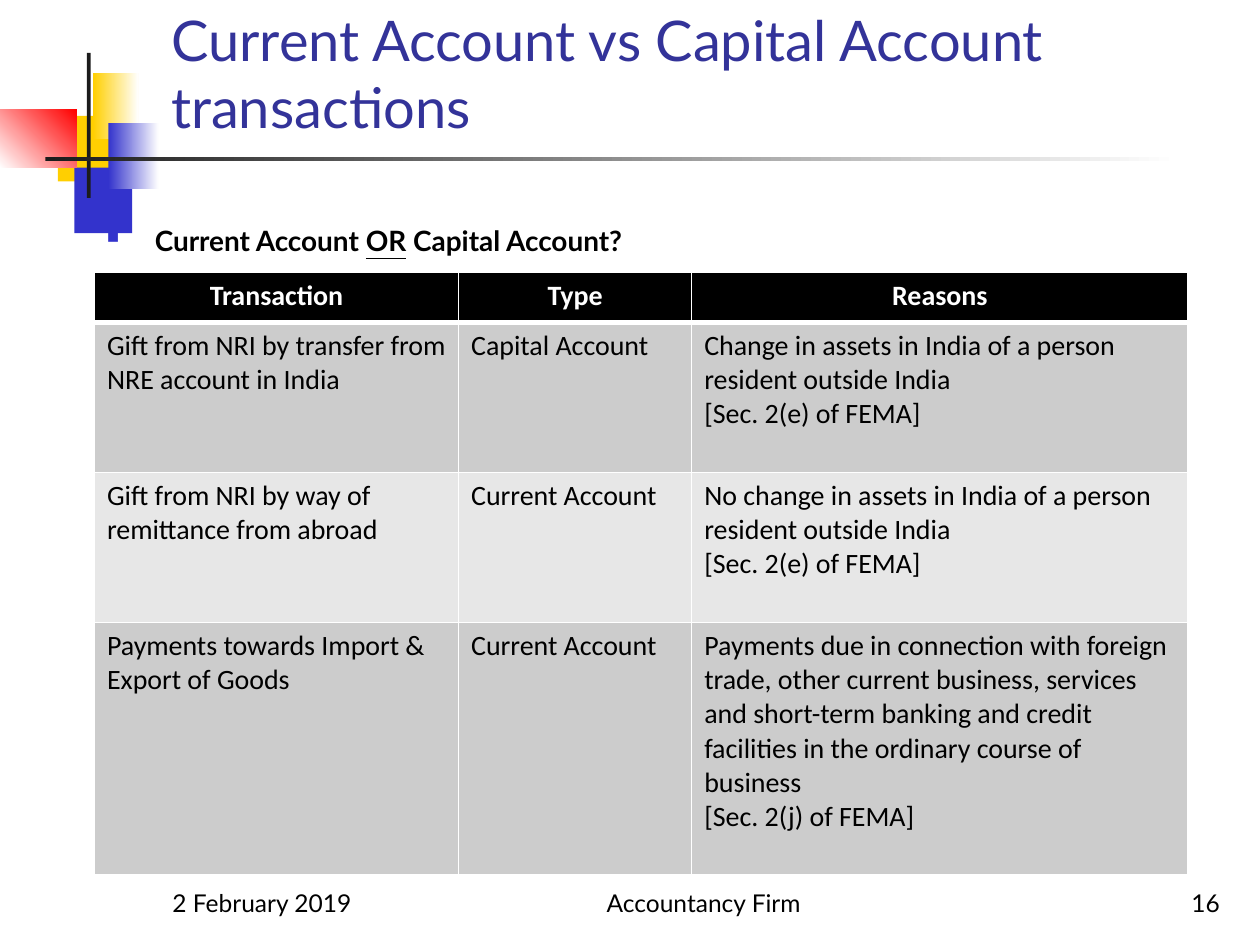
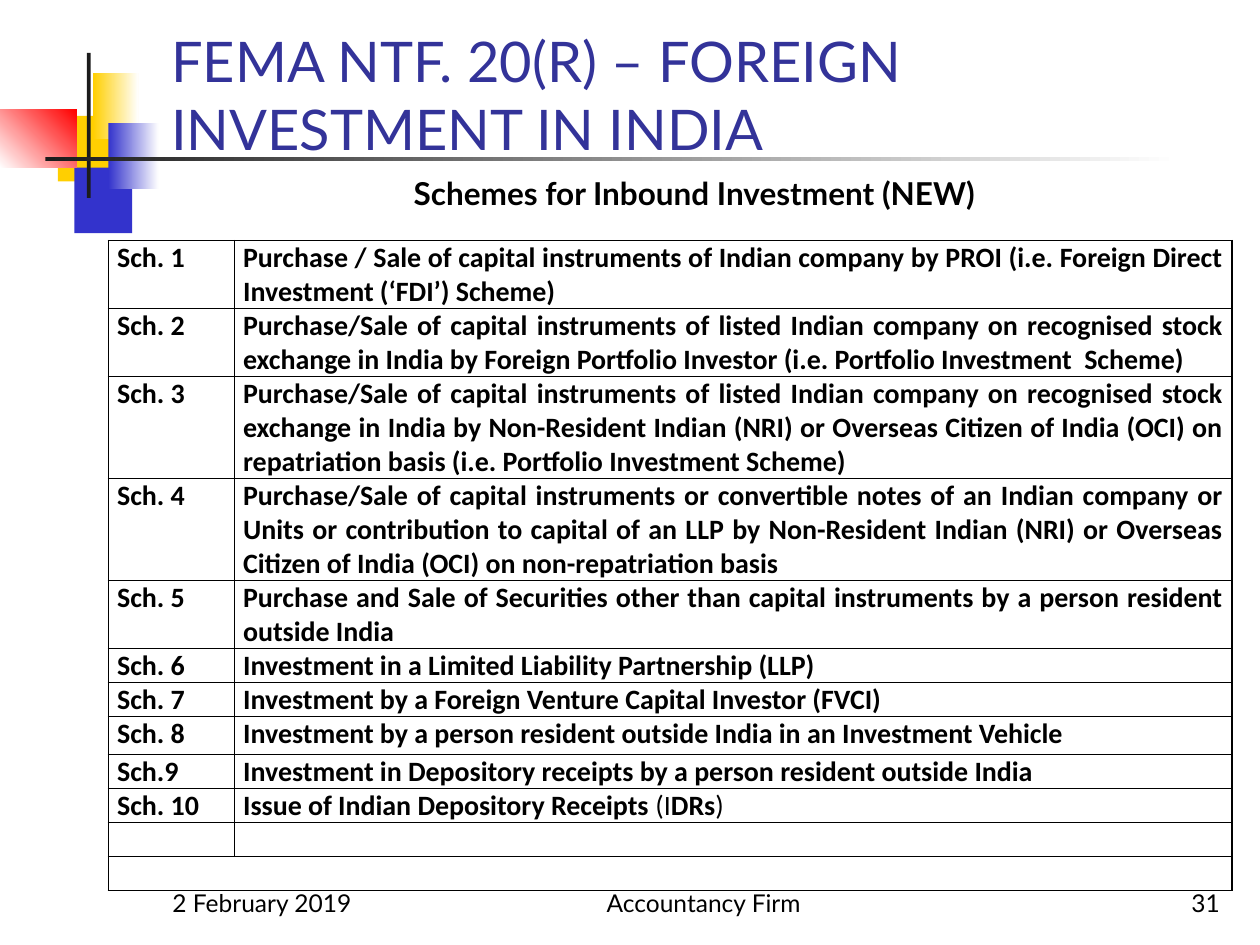
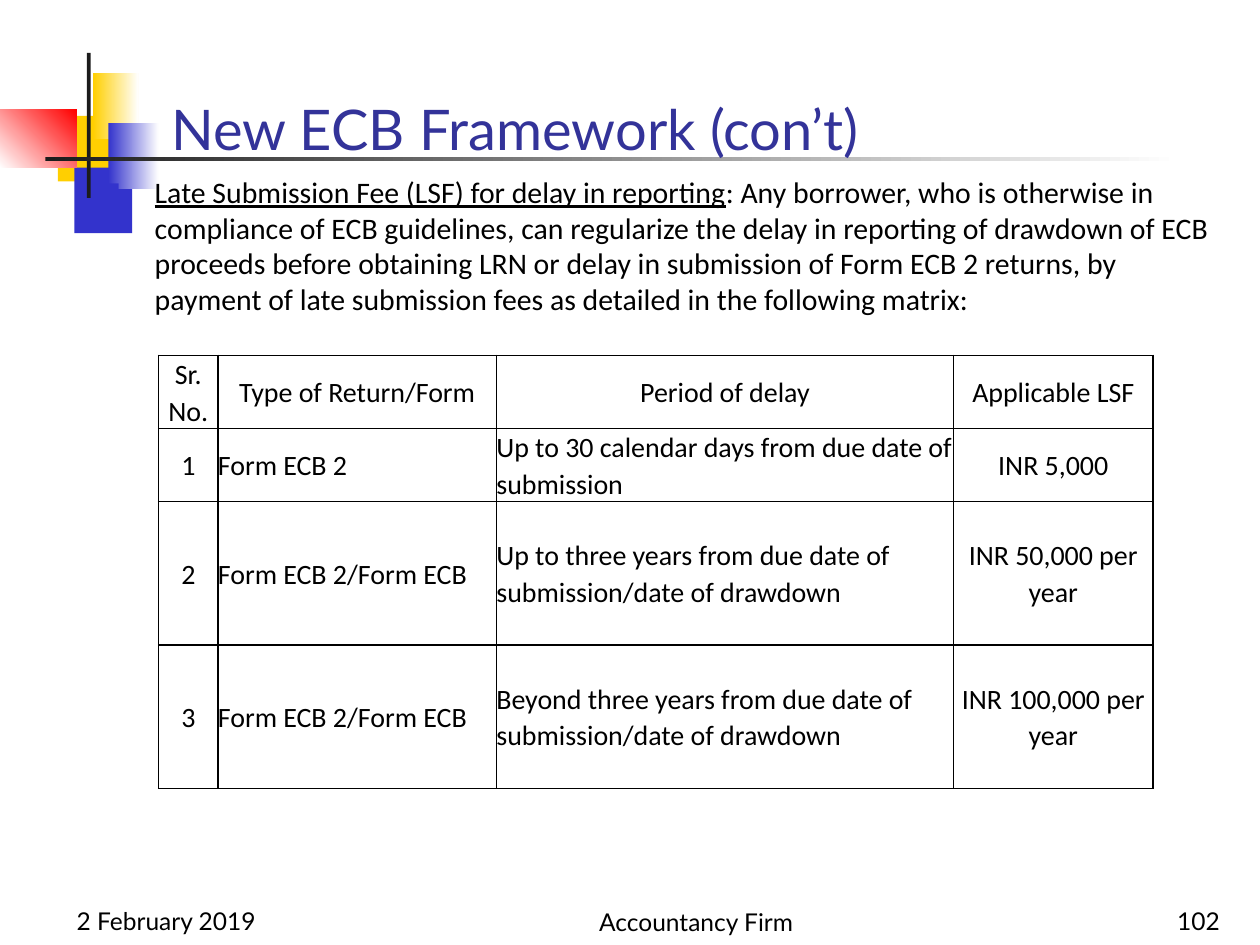
"""Build three slides on foreign exchange rules with a shared look."""
from dataclasses import dataclass

from lxml.etree import SubElement
from pptx import Presentation
from pptx.dml.color import RGBColor
from pptx.enum.shapes import MSO_SHAPE
from pptx.enum.text import MSO_ANCHOR, PP_ALIGN
from pptx.oxml.ns import qn
from pptx.util import Emu, Pt

PX = 9144
LEFT, CENTER, RIGHT, JUSTIFY = PP_ALIGN.LEFT, PP_ALIGN.CENTER, PP_ALIGN.RIGHT, PP_ALIGN.JUSTIFY


def px(n):
    return Emu(n * PX)


@dataclass(frozen=True)
class Theme:
    title: str = "333399"
    blue: str = "3333CC"
    yellow: str = "FFCF01"
    red: str = "FF0000"
    dark: str = "1C1C1C"
    black: str = "000000"
    white: str = "FFFFFF"
    band: str = "CCCCCC"
    light_band: str = "E7E7E7"
    head_font: str = "Lato"
    cell_font: str = "Calibri"
    title_size: int = 32
    scheme_size: int = 18
    body_size: int = 17
    cell_size: int = 16
    footer_size: int = 14


class Deck:
    def __init__(self, theme):
        self.t = theme
        self.prs = Presentation()
        self.prs.slide_width, self.prs.slide_height = px(1000), px(750)
        self.s = None

    def slide(self, title, title_box, number, date_at=(127, 683), firm_at=(400, 683)):
        t = self.t
        self.s = self.prs.slides.add_slide(self.prs.slide_layouts[6])
        self.rect((46, 92, 48, 52), t.yellow)
        self.rect((59, 133, 46, 52), t.blue)
        self.rect((74, 58, 36, 52), t.yellow, t.white)
        self.rect((86, 98, 40, 52), t.blue, t.white)
        self.rect((0, 87, 61, 46), t.white, t.red, angle=45)
        self.rect((69, 42, 3, 115), t.dark)
        self.rect((36, 125, 900, 3), t.dark, t.white)
        self.text(title_box, [(title, "")], t.title_size, t.title, anchor=MSO_ANCHOR.BOTTOM)
        footers = (
            ((*date_at, 208, 50), "2 February 2019", LEFT),
            ((*firm_at, 317, 50), "Accountancy Firm", CENTER),
            ((770, date_at[1], 208, 50), number, RIGHT),
        )
        for box, words, align in footers:
            self.text(box, [(words, "")], t.footer_size, align=align, anchor=MSO_ANCHOR.BOTTOM)

    def rect(self, box, color, end=None, angle=0):
        sp = self.s.shapes.add_shape(MSO_SHAPE.RECTANGLE, *map(px, box))
        sp.shadow.inherit = False
        sp.line.fill.background()
        if end is None:
            sp.fill.solid()
            sp.fill.fore_color.rgb = RGBColor.from_string(color)
            return
        sp.fill.gradient()
        sp.fill.gradient_angle = angle
        for stop, position, c in zip(sp.fill.gradient_stops, (0, 1), (color, end)):
            stop.position = position
            stop.color.rgb = RGBColor.from_string(c)

    def runs(self, p, parts, size, color, font):
        for words, flags in parts:
            r = p.add_run()
            r.text = words
            r.font.name, r.font.size = font, Pt(size)
            r.font.color.rgb = RGBColor.from_string(color)
            r.font.bold, r.font.underline = "b" in flags, "u" in flags
        if not parts:
            SubElement(p._p, qn("a:endParaRPr"), sz=str(size * 100))

    def text(self, box, parts, size, color=None, font=None, align=LEFT,
             anchor=MSO_ANCHOR.TOP, top=5, indent=0, bullet=False):
        tf = self.s.shapes.add_textbox(*map(px, box)).text_frame
        tf.word_wrap, tf.vertical_anchor, tf.margin_top = True, anchor, px(top)
        p = tf.paragraphs[0]
        p.alignment = align
        pPr = p._p.get_or_add_pPr()
        pPr.set("marL", str(px(indent)))
        if bullet:
            pPr.set("indent", str(-px(indent)))
            SubElement(SubElement(pPr, qn("a:buClr")), qn("a:srgbClr"), val=self.t.blue)
            SubElement(pPr, qn("a:buSzPct"), val="60000")
            SubElement(pPr, qn("a:buChar"), char="■")
        self.runs(p, parts, size, color or self.t.black, font or self.t.head_font)

    def border(self, cell, color, widths):
        tcPr = cell._tc.get_or_add_tcPr()
        for i, (side, width) in enumerate(zip("LRTB", widths)):
            ln = SubElement(tcPr, qn(f"a:ln{side}"), w=str(Pt(width)))
            SubElement(SubElement(ln, qn("a:solidFill")), qn("a:srgbClr"), val=color)
            tcPr.insert(i, ln)

    def table(self, at, cols, heights, rows, aligns, head_align=None, fills=None,
              line=None, flags="", margins=(10, 5), anchor=MSO_ANCHOR.TOP, spacing=None):
        t = self.t
        box = (*at, sum(cols), sum(heights))
        table = self.s.shapes.add_table(len(rows), len(cols), *map(px, box)).table
        table.first_row = table.horz_banding = False
        for col, width in zip(table.columns, cols):
            col.width = px(width)
        for i, (row, height) in enumerate(zip(rows, heights)):
            table.rows[i].height = px(height)
            head = i == 0 and fills
            for j, value in enumerate(row):
                cell = table.cell(i, j)
                cell.margin_left = cell.margin_right = px(margins[0])
                cell.margin_top = cell.margin_bottom = px(margins[1])
                cell.vertical_anchor = anchor
                if fills:
                    cell.fill.solid()
                    cell.fill.fore_color.rgb = RGBColor.from_string(fills[i])
                else:
                    cell.fill.background()
                rule = 3 if fills else 1
                self.border(cell, line or t.black,
                            (1, 1, rule if i == 1 else 1, rule if i == 0 else 1))
                lines = value.split("\n") if isinstance(value, str) else [value]
                for k, words in enumerate(lines):
                    tf = cell.text_frame
                    p = tf.add_paragraph() if k else tf.paragraphs[0]
                    p.alignment = head_align if i == 0 and head_align else aligns[j]
                    if spacing:
                        p.line_spacing, p.space_after = spacing[0], Pt(spacing[1])
                    if isinstance(words, str):
                        words = [(words, "b" if head else flags)] if words else []
                    self.runs(p, words, t.cell_size, t.white if head else t.black, t.cell_font)
        return table


def account_slide(deck):
    t = deck.t
    deck.slide("Current Account vs Capital Account transactions", (126, 12, 852, 104), "16")
    deck.text((75, 142, 908, 568),
              [("Current Account ", "b"), ("OR", "bu"), (" Capital Account?", "b")],
              t.cell_size, top=35, indent=38, bullet=True)
    rows = [
        ("Transaction", "Type", "Reasons"),
        ("Gift from NRI by transfer from NRE account in India", "Capital Account",
         "Change in assets in India of a person resident outside India\n[Sec. 2(e) of FEMA]"),
        ("Gift from NRI by way of remittance from abroad", "Current Account",
         "No change in assets in India of a person resident outside India\n[Sec. 2(e) of FEMA]"),
        ("Payments towards Import & Export of Goods", "Current Account",
         "Payments due in connection with foreign trade, other current business, services "
         "and short-term banking and credit facilities in the ordinary course of business\n"
         "[Sec. 2(j) of FEMA]"),
    ]
    deck.table((75, 216), (289, 185, 394), (40, 119, 119, 200), rows, (LEFT,) * 3, CENTER,
               fills=(t.black, t.band, t.light_band, t.band), line=t.white)


def scheme_slide(deck):
    deck.slide("FEMA NTF. 20(R) – FOREIGN INVESTMENT IN INDIA", (126, 23, 852, 110), "31")
    deck.text((83, 133, 892, 558), [("Schemes for Inbound Investment (NEW)", "b")],
              deck.t.scheme_size, align=CENTER, indent=44)
    listed = ("Purchase/Sale of capital instruments of listed Indian company on recognised "
              "stock exchange in India by ")
    citizens = "Non-Resident Indian (NRI) or Overseas Citizen of India (OCI) on "
    rows = [
        ("Sch. 1", "Purchase / Sale of capital instruments of Indian company by PROI "
                   "(i.e. Foreign Direct Investment (‘FDI’) Scheme)"),
        ("Sch. 2", listed + "Foreign Portfolio Investor (i.e. Portfolio Investment  Scheme)"),
        ("Sch. 3", listed + citizens + "repatriation basis (i.e. Portfolio Investment Scheme)"),
        ("Sch. 4", "Purchase/Sale of capital instruments or convertible notes of an Indian "
                   "company or Units or contribution to capital of an LLP by "
                   + citizens + "non-repatriation basis"),
        ("Sch. 5", "Purchase and Sale of Securities other than capital instruments by a "
                   "person resident outside India"),
        ("Sch. 6", "Investment in a Limited Liability Partnership (LLP)"),
        ("Sch. 7", "Investment by a Foreign Venture Capital Investor (FVCI)"),
        ("Sch. 8", "Investment by a person resident outside India in an Investment Vehicle"),
        ("Sch.9", "Investment in Depository receipts by a person resident outside India"),
        ("Sch. 10", [("Issue of Indian Depository Receipts ", "b"), ("(I", ""),
                     ("DRs", "b"), (")", "")]),
        ("", ""),
        ("", ""),
    ]
    heights = (54, 54, 81, 81, 54, 27, 27, 30, 27, 27, 27, 27)
    table = deck.table((86, 191), (100, 792), heights, rows, (JUSTIFY,) * 2,
                       flags="b", margins=(7, 0))
    table.cell(11, 0).merge(table.cell(11, 1))


def fee_slide(deck):
    deck.slide("New ECB Framework (con’t)", (126, 23, 852, 110), "102", (51, 697), (394, 698))
    deck.text((75, 133, 904, 587), [
        ("Late Submission Fee (LSF) for delay in reporting", "u"),
        (": Any borrower, who is otherwise in compliance of ECB guidelines, can regularize "
         "the delay in reporting of drawdown of ECB proceeds before obtaining LRN or delay "
         "in submission of Form ECB 2 returns, by payment of late submission fees as "
         "detailed in the following matrix:", ""),
    ], deck.t.body_size, font=deck.t.cell_font, indent=38, bullet=True)
    rows = [
        ("Sr. No.", "Type of Return/Form", "Period of delay", "Applicable LSF"),
        ("1", "Form ECB 2", "Up to 30 calendar days from due date of submission", "INR 5,000"),
        ("2", "Form ECB 2/Form ECB",
         "Up to three years from due date of submission/date of drawdown",
         "INR 50,000 per year"),
        ("3", "Form ECB 2/Form ECB",
         "Beyond three years from due date of submission/date of drawdown",
         "INR 100,000 per year"),
    ]
    deck.table((126, 282), (47, 221, 363, 158), (58, 58, 114, 114), rows,
               (CENTER, LEFT, LEFT, CENTER), CENTER, margins=(0, 0),
               anchor=MSO_ANCHOR.MIDDLE, spacing=(1.07, 8))


def main():
    deck = Deck(Theme())
    account_slide(deck)
    scheme_slide(deck)
    fee_slide(deck)
    deck.prs.save("out.pptx")


if __name__ == "__main__":
    main()
